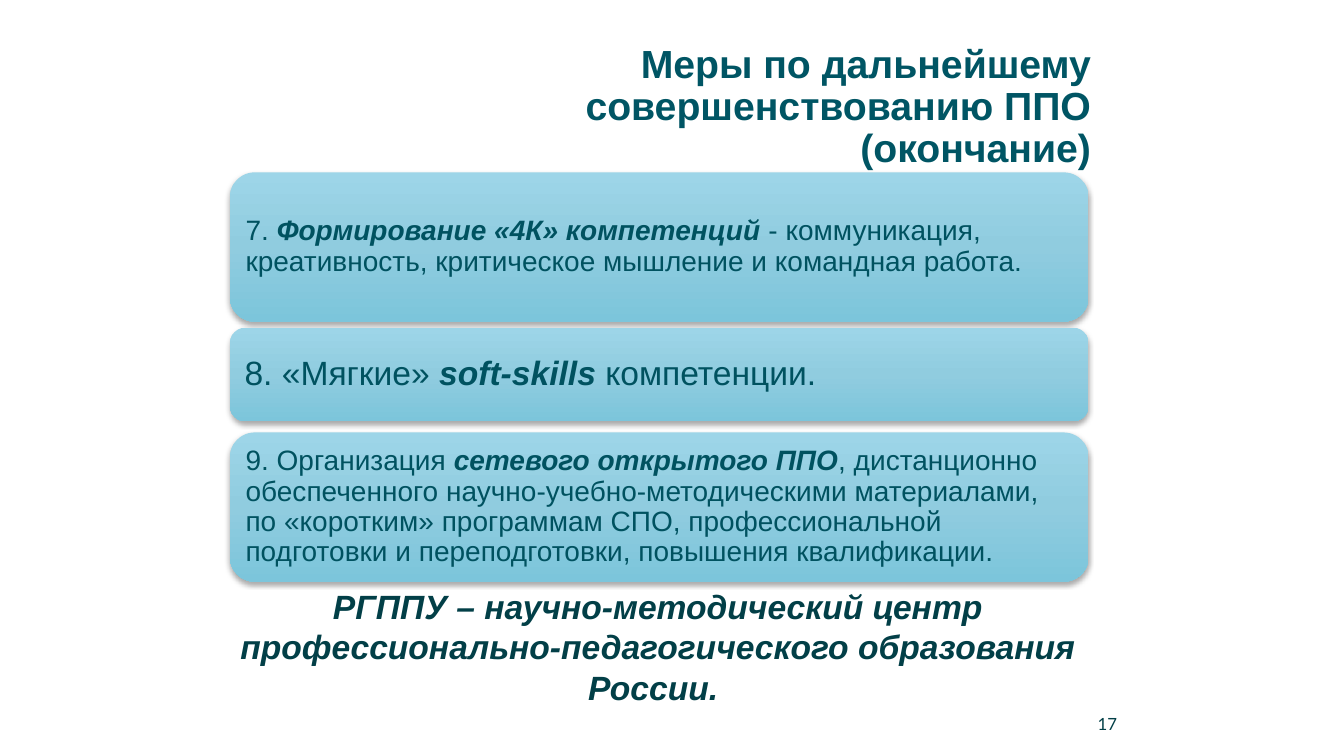
import copy

import lxml.etree
import pptx
import pptx.dml.color
import pptx.enum.shapes
import pptx.enum.text
import pptx.oxml
import pptx.util

Pt = pptx.util.Pt
ALIGN = pptx.enum.text.PP_ALIGN
ANCHOR = pptx.enum.text.MSO_ANCHOR

TITLE = "005564"
DARK = "023F47"
CARD_TEXT = "005260"
GRADIENT = ["9DD5E8", "90CCDF", "7CC5DB"]

SHADOW = (
    '<a:effectLst xmlns:a="http://schemas.openxmlformats.org/drawingml/2006/main">'
    '<a:outerShdw blurRad="44450" dist="27940" dir="5400000" algn="ctr" rotWithShape="0">'
    '<a:srgbClr val="000000"><a:alpha val="32000"/></a:srgbClr>'
    '</a:outerShdw></a:effectLst>'
)

# Each measure: top, height, text size, runs as (text, emphasised)
MEASURES = [
    (123.1, 106.6, 20, [
        ("7. ", False),
        ("Формирование «4К» компетенций ", True),
        ("- коммуникация, креативность, критическое мышление и командная работа.", False),
    ]),
    (234, 67, 24, [
        ("8. «Мягкие» ", False),
        ("soft-skills", True),
        (" компетенции.", False),
    ]),
    (308.9, 106.6, 20, [
        ("9. Организация ", False),
        ("сетевого открытого ППО", True),
        (", дистанционно обеспеченного научно-учебно-методическими материалами, "
         "по «коротким» программам СПО, профессиональной подготовки и переподготовки, "
         "повышения квалификации.", False),
    ]),
]


def color(value):
    return pptx.dml.color.RGBColor.from_string(value)


def style(font, size, value, bold=False, italic=False, name="Arial"):
    font.name = name
    font.size = Pt(size)
    font.bold = bold
    font.italic = italic
    font.color.rgb = color(value)


def add_text(s, box, text, align, anchor, spacing=None, **look):
    sp = s.shapes.add_textbox(*map(Pt, box))
    tf = sp.text_frame
    tf.word_wrap = True
    tf.vertical_anchor = anchor
    tf.text = text
    p = tf.paragraphs[0]
    p.alignment = align
    p.line_spacing = spacing
    style(p.runs[0].font, **look)


def fill_gradient(sp):
    sp.fill.gradient()
    sp.fill.gradient_angle = 270
    first = sp.fill.gradient_stops[0]._gs
    first.addnext(copy.deepcopy(first))
    for i, (stop, value) in enumerate(zip(sp.fill.gradient_stops, GRADIENT)):
        stop.position = i / 2
        stop.color.rgb = color(value)


def add_measure(s, box, size, runs):
    sp = s.shapes.add_shape(
        pptx.enum.shapes.MSO_SHAPE.ROUNDED_RECTANGLE, *map(Pt, box))
    fill_gradient(sp)
    sp.line.fill.background()
    sp._element.spPr.append(pptx.oxml.parse_xml(SHADOW))

    tf = sp.text_frame
    tf.word_wrap = True
    tf.vertical_anchor = ANCHOR.MIDDLE
    inset = Pt(0.3 * size)
    tf.margin_left = tf.margin_right = inset
    tf.margin_top = tf.margin_bottom = inset
    p = tf.paragraphs[0]
    p.alignment = ALIGN.LEFT
    p.line_spacing = 0.9
    for text, strong in runs:
        r = p.add_run()
        r.text = text
        style(r.font, size, CARD_TEXT, bold=strong, italic=strong)


def add_measures_slide(prs):
    s = prs.slides.add_slide(prs.slide_layouts[6])

    # Page number
    add_text(s, (733.7, 502.6, 71.3, 28.8), "17", ALIGN.RIGHT, ANCHOR.MIDDLE,
             size=12, value=DARK, name="Lato")

    # Title
    add_text(s, (269.3, 50.4, 517, 75.6),
             "Меры по дальнейшему совершенствованию ППО (окончание)",
             ALIGN.RIGHT, ANCHOR.BOTTOM, spacing=0.9,
             size=28, value=TITLE, bold=True)

    # Conclusion
    add_text(s, (164.2, 415, 611.3, 90),
             "РГППУ – научно-методический центр профессионально-педагогического "
             "образования России. ",
             ALIGN.CENTER, ANCHOR.TOP,
             size=24, value=DARK, bold=True, italic=True)

    # Measures
    for top, height, size, runs in MEASURES:
        add_measure(s, (164.2, top, 613.4, height), size, runs)


def main():
    prs = pptx.Presentation()
    prs.slide_width = Pt(960)
    prs.slide_height = Pt(540)
    add_measures_slide(prs)
    prs.save("out.pptx")


if __name__ == "__main__":
    main()
